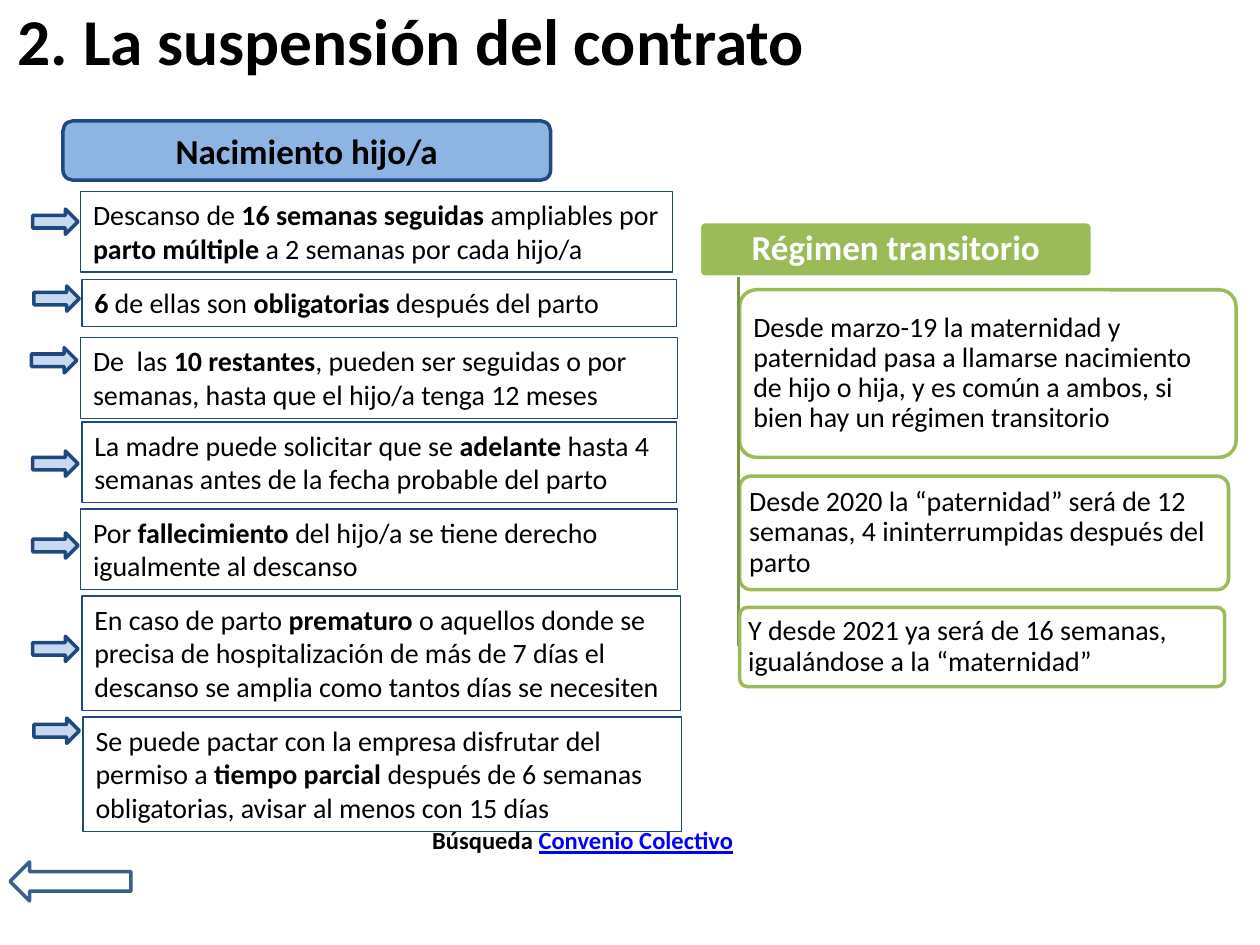
from lxml import etree
from pptx import Presentation
from pptx.dml.color import RGBColor
from pptx.enum.shapes import MSO_CONNECTOR, MSO_SHAPE
from pptx.enum.text import MSO_ANCHOR, MSO_AUTO_SIZE, PP_ALIGN
from pptx.oxml.ns import qn
from pptx.util import Inches, Pt

LEFT, CENTER = PP_ALIGN.LEFT, PP_ALIGN.CENTER
TOP, MIDDLE = MSO_ANCHOR.TOP, MSO_ANCHOR.MIDDLE
RECT, ROUND = MSO_SHAPE.RECTANGLE, MSO_SHAPE.ROUNDED_RECTANGLE
PILL = MSO_SHAPE.FLOWCHART_ALTERNATE_PROCESS
NEXT, BACK = MSO_SHAPE.RIGHT_ARROW, MSO_SHAPE.LEFT_ARROW

BLACK = RGBColor(0x00, 0x00, 0x00)
WHITE = RGBColor(0xFF, 0xFF, 0xFF)
NAVY = RGBColor(0x1F, 0x49, 0x7D)
STEEL = RGBColor(0x3A, 0x5F, 0x8C)
BLUE = RGBColor(0x8E, 0xB4, 0xE3)
PALE = RGBColor(0xC6, 0xD9, 0xF1)
GREEN = RGBColor(0x9B, 0xBB, 0x59)
OLIVE = RGBColor(0x7C, 0x96, 0x47)
LINK = RGBColor(0x00, 0x00, 0xFF)

# Left, top, width, height of the box; left, top of its arrow; text (*bold*)
RULES = [
    (0.64, 1.52, 4.70, 0.64, 0.26, 1.66,
     "Descanso de *16 semanas seguidas *ampliables por "
     "*parto múltiple *a 2 semanas por cada hijo/a"),
    (0.65, 2.22, 4.72, 0.37, 0.27, 2.27,
     "*6* de ellas son *obligatorias* después del parto"),
    (0.64, 2.68, 4.74, 0.64, 0.25, 2.76,
     "De  las *10 restantes*, pueden ser seguidas o por semanas, "
     "hasta que el hijo/a tenga 12 meses"),
    (0.65, 3.35, 4.72, 0.64, 0.26, 3.58,
     "La madre puede solicitar que se *adelante* hasta 4 semanas "
     "antes de la fecha probable del parto"),
    (0.64, 4.04, 4.74, 0.64, 0.26, 4.23,
     "Por *fallecimiento* del hijo/a se tiene derecho igualmente al descanso"),
    (0.65, 4.73, 4.75, 0.91, 0.26, 5.05,
     "En caso de parto *prematuro* o aquellos donde se precisa de "
     "hospitalización de más de 7 días el descanso se amplia como "
     "tantos días se necesiten"),
    (0.66, 5.69, 4.75, 0.91, 0.27, 5.70,
     "Se puede pactar con la empresa disfrutar del permiso a "
     "*tiempo parcial *después de 6 semanas obligatorias, "
     "avisar al menos con 15 días"),
]

# Top, width, height, side inset, end of the rail, text
CARDS = [
    (2.30, 3.94, 1.33, 0.07, 2.96,
     "Desde marzo-19 la maternidad y paternidad pasa a llamarse nacimiento "
     "de hijo o hija, y es común a ambos, si bien hay un régimen transitorio"),
    (3.78, 3.88, 0.90, 0.05, 4.23,
     "Desde 2020 la “paternidad” será de 12 semanas, "
     "4 ininterrumpidas después del parto"),
    (4.82, 3.85, 0.63, 0.05, 5.13,
     "Y desde 2021 ya será de 16 semanas, igualándose a la “maternidad”"),
]


def write(shape, text, size=16, color=BLACK, bold=False, align=LEFT,
          anchor=MIDDLE, side=0.1, edge=0.05, space=1.0, wrap=True):
    """Fill a shape with one paragraph; *marks* switch bold on and off."""
    frame = shape.text_frame
    frame.auto_size = MSO_AUTO_SIZE.NONE
    frame.word_wrap = wrap
    frame.vertical_anchor = anchor
    frame.margin_left = frame.margin_right = Inches(side)
    frame.margin_top = frame.margin_bottom = Inches(edge)
    para = frame.paragraphs[0]
    para.alignment = align
    para.line_spacing = space
    for i, part in enumerate(text.split("*")):
        if part:
            run = para.add_run()
            run.text = part
            font = run.font
            font.name, font.size = "Calibri", Pt(size)
            font.bold = bold or i % 2 == 1
            font.color.rgb = color
    return para


def draw(slide, kind, left, top, width, height, line, fill=None, weight=2):
    shape = slide.shapes.add_shape(
        kind, Inches(left), Inches(top), Inches(width), Inches(height))
    shape.shadow.inherit = False
    if fill is None:
        shape.fill.background()
    else:
        shape.fill.solid()
        shape.fill.fore_color.rgb = fill
    shape.line.color.rgb = line
    shape.line.width = Pt(weight)
    if kind == ROUND:
        shape.adjustments[0] = 0.1
    return shape


def rail(slide, left, top, end):
    line = slide.shapes.add_connector(
        MSO_CONNECTOR.STRAIGHT, Inches(left), Inches(top), Inches(left), Inches(end))
    line.line.color.rgb = OLIVE
    line.line.width = Pt(2)
    etree.SubElement(line._element.spPr, qn("a:effectLst"))


def head(slide, text):
    title = slide.shapes.title
    title.left, title.top = Inches(0.04), Inches(0)
    title.width, title.height = Inches(9), Inches(0.63)
    write(title, text, size=37.4, bold=True)


def search(slide):
    box = slide.shapes.add_textbox(
        Inches(3.32), Inches(6.5), Inches(2.61), Inches(0.34))
    para = write(box, "Búsqueda *Convenio Colectivo", size=14, bold=True,
                 align=CENTER, anchor=TOP, wrap=False)
    font = para.runs[1].font
    font.color.rgb = LINK
    font.underline = True


def main():
    prs = Presentation()
    prs.slide_width, prs.slide_height = Inches(10), Inches(7.5)
    slide = prs.slides.add_slide(prs.slide_layouts[5])
    head(slide, "2. La suspensión del contrato")

    # Back arrow
    draw(slide, BACK, 0.08, 6.84, 0.96, 0.31, STEEL)

    # Left column: birth leave
    pill = draw(slide, PILL, 0.5, 0.96, 3.87, 0.47, NAVY, BLUE)
    write(pill, "Nacimiento hijo/a", size=20, bold=True, align=CENTER)
    for left, top, width, height, x, y, text in RULES:
        box = draw(slide, RECT, left, top, width, height, NAVY, weight=0.75)
        write(box, text, anchor=TOP)
        draw(slide, NEXT, x, y, 0.36, 0.2, NAVY, PALE)

    # Right column: transitional rules
    label = draw(slide, ROUND, 5.55, 1.76, 3.12, 0.44, WHITE, GREEN)
    write(label, "Régimen transitorio", size=20, color=WHITE, bold=True,
          align=CENTER, space=0.9)
    for top, width, height, side, end, text in CARDS:
        rail(slide, 5.86, 2.2, end)
        card = draw(slide, ROUND, 5.87, top, width, height, GREEN, WHITE)
        write(card, text, side=side, edge=0.04, space=0.9)

    search(slide)
    prs.save("out.pptx")


if __name__ == "__main__":
    main()
